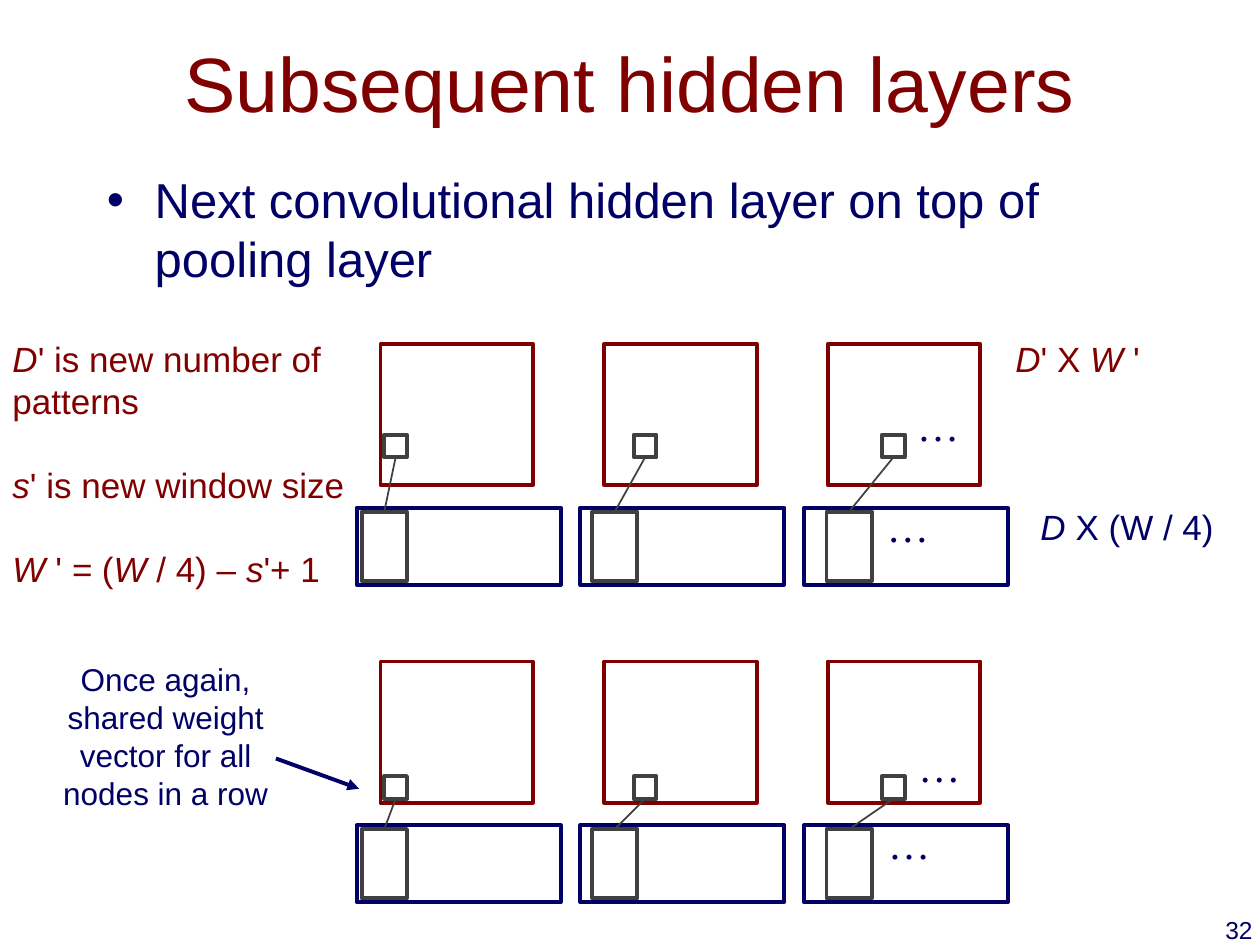
"""Build the slide on stacked convolutional layers, on a grid of 100 columns by 75 rows."""
from pptx import Presentation
from pptx.dml.color import RGBColor as Rgb
from pptx.enum.shapes import MSO_CONNECTOR as Conn, MSO_SHAPE as Form
from pptx.enum.text import MSO_ANCHOR as Anchor, PP_ALIGN as Align
from pptx.oxml.ns import qn
from pptx.util import Inches, Pt
from lxml.etree import SubElement as Sub

THEME = {
    "red": Rgb(0x80, 0x00, 0x00), "navy": Rgb(0x00, 0x00, 0x66), "grey": Rgb(0x40, 0x40, 0x40),
    "sans": "Arial", "serif": "Times New Roman",
    "title": Pt(44), "body": Pt(28), "dots": Pt(24), "label": Pt(20), "note": Pt(18), "page": Pt(14),
    "thick": Pt(2.25), "thin": Pt(1),
}

deck = Presentation()
deck.slide_width, deck.slide_height = Inches(10), Inches(7.5)
COL, ROW = deck.slide_width / 100, deck.slide_height / 75
slide = deck.slides.add_slide(deck.slide_layouts[5])
shapes = slide.shapes


def grid(*at):
    """Turn column and row pairs into lengths."""
    return [round(n * (ROW if i % 2 else COL)) for i, n in enumerate(at)]


def write(frame, lines, size, tone, face="sans", wrap=True, **form):
    """Fill a frame with paragraphs; stars enclose italic words."""
    frame.word_wrap = wrap
    for i, line in enumerate(lines):
        para = frame.paragraphs[0] if i == 0 else frame.add_paragraph()
        for key, val in form.items():
            setattr(para, key, val)
        if i:
            para.space_before = Pt(24)
        for j, part in enumerate(line.split("*")):
            if part:
                run = para.add_run()
                run.text = part
                looks = {"name": THEME[face], "size": THEME[size], "italic": j % 2 == 1}
                for key, val in looks.items():
                    setattr(run.font, key, val)
                run.font.color.rgb = THEME[tone]


title = shapes.title
title.left, title.top, title.width, title.height = grid(7.5, 0.2, 85, 12.5)
title.text_frame.vertical_anchor = Anchor.MIDDLE
write(title.text_frame, ["Subsequent hidden layers"], "title", "red", alignment=Align.CENTER)

body = shapes.add_textbox(*grid(7.5, 13, 85, 45)).text_frame
write(body, ["Next convolutional hidden layer on top of pooling layer"], "body", "navy",
      space_before=Pt(5.6))
props = body.paragraphs[0]._p.get_or_add_pPr()
for key, val in {"marL": Inches(0.38), "indent": -Inches(0.38)}.items():
    props.set(key, str(val))
Sub(props, qn("a:buFont"), typeface=THEME["sans"])
Sub(props, qn("a:buChar"), char="•")

GAP = 17.75
cells = [30.5, 50.3, 70]
panes = [28.7, 47, 65.6]
boxes, links = [], []
for top, node in ((27.3, 34.5), (52.5, 61.6)):
    for i, (cell, pane) in enumerate(zip(cells, panes)):
        boxes += [
            ((30.2 + i * GAP, top, 12.1, 11.2), "red"),
            ((28.3 + i * GAP, top + 13, 16.2, 6.1), "navy"),
            ((cell, node, 1.8, 1.8), "grey"),
            ((pane, top + 13.3, 3.6, 5.5), "grey"),
        ]
        links.append(((pane + 1.8, top + 13.3, cell + 0.9, node + 1.8), "grey", "thin"))

for at, tone in boxes:
    box = shapes.add_shape(Form.RECTANGLE, *grid(*at))
    box.shadow.inherit = False
    box.fill.background()
    box.line.color.rgb, box.line.width = THEME[tone], THEME["thick"]

links.append(((21.9, 60.2, 28.5, 62.6), "navy", "thick"))
for at, tone, width in links:
    link = shapes.add_connector(Conn.STRAIGHT, *grid(*at))
    link.line.color.rgb, link.line.width = THEME[tone], THEME[width]
    Sub(link._element.spPr, qn("a:effectLst"))
Sub(link.line._get_or_add_ln(), qn("a:tailEnd"), type="triangle")

for left, top in ((71.8, 31.2), (69.4, 39.2), (69.5, 64.4), (71.9, 58.3)):
    dots = shapes.add_textbox(*grid(left, top, 4.8, 6.1))
    write(dots.text_frame, ["…"], "dots", "navy", "serif")

facts = ["*D*' is new number of patterns", "*s*' is new window size",
         "*W *' *= *(*W* / 4) – *s*'+ 1"]
notes = [
    ((0, 26.3, 28.5, 21.2), facts, "label", "red", {}),
    ((79.6, 26.3, 13, 4.4), ["*D*' X *W *'"], "label", "red", {}),
    ((81.6, 39.6, 16.6, 4.4), ["*D *X (W / 4)"], "label", "navy", {"wrap": False}),
    ((3, 51.9, 20.3, 13.1), ["Once again, shared weight vector for all nodes in a row"],
     "note", "navy", {"alignment": Align.CENTER}),
    ((79.6, 72.1, 20.8, 5), ["32"], "page", "navy", {"alignment": Align.RIGHT}),
]
for at, lines, size, tone, form in notes:
    write(shapes.add_textbox(*grid(*at)).text_frame, lines, size, tone, **form)

deck.save("out.pptx")
